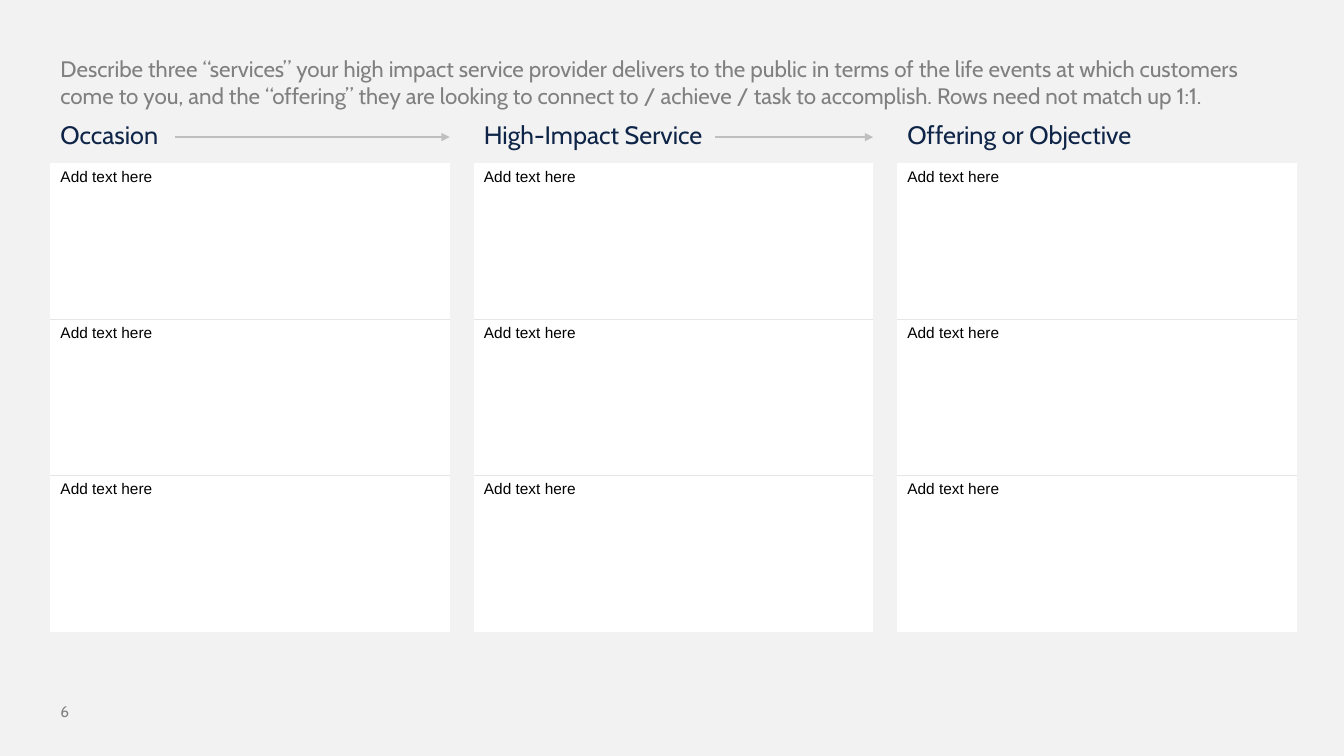
import dataclasses

import lxml.etree
import pptx
import pptx.dml.color
import pptx.enum.shapes
import pptx.enum.text
import pptx.oxml.ns
import pptx.util

Inches = pptx.util.Inches
qn = pptx.oxml.ns.qn


@dataclasses.dataclass(frozen=True)
class Theme:
    background: str = "F2F2F2"
    cell: str = "FFFFFF"
    rule: str = "E6E6E6"
    arrow: str = "BFBFBF"
    prompt = {"name": "Cabin", "size": 16, "color": "808080"}
    heading = {"name": "Cabin", "size": 18, "color": "0F2548"}
    body = {"name": "Arial", "size": 11, "color": "000000"}
    number = {"name": "Cabin", "size": 11, "color": "808080"}


THEME = Theme()

# Grid in inches
WIDTH, HEIGHT = 13.33, 7.5
MARGIN = 0.5
COLUMN, GAP = 3.96, 0.24
TABLE_TOP, HEADING_ROW, BODY_ROW = 1.14, 0.48, 1.55
ARROW_Y = 1.36
NO_STYLE_NO_GRID = "{2D5ABB26-0587-4C30-8999-92F81FD0307C}"

PROMPT = (
    "Describe three “services” your high impact service provider delivers to the "
    "public in terms of the life events at which customers come to you, and the "
    "“offering” they are looking to connect to / achieve / task to accomplish. "
    "Rows need not match up 1:1."
)
HEADINGS = ["Occasion", "High-Impact Service", "Offering or Objective"]
ROWS = [["Add text here"] * len(HEADINGS) for _ in range(3)]


def rgb(value):
    return pptx.dml.color.RGBColor.from_string(value)


def write(text_frame, text, style):
    """Put one formatted, left-aligned paragraph at the top of a frame."""
    paragraph = text_frame.paragraphs[0]
    paragraph.alignment = pptx.enum.text.PP_ALIGN.LEFT
    run = paragraph.add_run()
    run.text = text
    settings = {"name": style["name"], "size": pptx.util.Pt(style["size"]), "bold": False}
    for attribute, value in settings.items():
        setattr(run.font, attribute, value)
    run.font.color.rgb = rgb(style["color"])


def place_text(shape, box, text, style):
    for attribute, value in zip(("left", "top", "width", "height"), box):
        setattr(shape, attribute, Inches(value))
    frame_format = {
        "word_wrap": True,
        "auto_size": pptx.enum.text.MSO_AUTO_SIZE.NONE,
        "vertical_anchor": pptx.enum.text.MSO_ANCHOR.TOP,
    }
    for attribute, value in frame_format.items():
        setattr(shape.text_frame, attribute, value)
    write(shape.text_frame, text, style)


def add_border(cell, side):
    properties = cell._tc.get_or_add_tcPr()
    line = lxml.etree.Element(qn(f"a:{side}"), w=str(pptx.util.Pt(1)))
    fill = lxml.etree.SubElement(line, qn("a:solidFill"))
    lxml.etree.SubElement(fill, qn("a:srgbClr"), val=THEME.rule)
    properties.insert(0, line)


def add_service_table(slide):
    row_count, column_count = len(ROWS) + 1, 2 * len(HEADINGS) - 1
    widths = [GAP if index % 2 else COLUMN for index in range(column_count)]
    heights = [HEADING_ROW] + [BODY_ROW] * len(ROWS)
    frame = slide.shapes.add_table(
        row_count, column_count, Inches(MARGIN), Inches(TABLE_TOP),
        Inches(sum(widths)), Inches(sum(heights)))
    table = frame.table
    table.first_row = table.horz_banding = False
    frame.element.find(f".//{qn('a:tableStyleId')}").text = NO_STYLE_NO_GRID
    for column, width in zip(table.columns, widths):
        column.width = Inches(width)
    for row, height in zip(table.rows, heights):
        row.height = Inches(height)
    for cell in table.iter_cells():
        cell.fill.background()

    # Text sits in every other column; the others are gaps
    for row_index, texts in enumerate([HEADINGS] + ROWS):
        for text_index, text in enumerate(texts):
            cell = table.cell(row_index, 2 * text_index)
            write(cell.text_frame, text, THEME.body if row_index else THEME.heading)
            if row_index:
                cell.fill.solid()
                cell.fill.fore_color.rgb = rgb(THEME.cell)
            if 0 < row_index < len(ROWS):
                add_border(cell, "lnB")
            if row_index > 1:
                add_border(cell, "lnT")


def add_arrow(slide, start, end):
    arrow = slide.shapes.add_connector(
        pptx.enum.shapes.MSO_CONNECTOR.STRAIGHT,
        Inches(start), Inches(ARROW_Y), Inches(end), Inches(ARROW_Y))
    arrow.line.width = pptx.util.Pt(1)
    arrow.line.color.rgb = rgb(THEME.arrow)
    lxml.etree.SubElement(arrow.line._get_or_add_ln(), qn("a:tailEnd"), type="triangle")
    lxml.etree.SubElement(arrow.element.spPr, qn("a:effectLst"))


def main():
    presentation = pptx.Presentation()
    presentation.slide_width, presentation.slide_height = Inches(WIDTH), Inches(HEIGHT)
    slide = presentation.slides.add_slide(presentation.slide_layouts.get_by_name("Title Only"))
    slide.background.fill.solid()
    slide.background.fill.fore_color.rgb = rgb(THEME.background)

    # Prompt and slide number
    place_text(slide.shapes.title, (MARGIN, MARGIN, WIDTH - 2 * MARGIN, 0.64),
               PROMPT, THEME.prompt)
    number = slide.shapes.add_textbox(0, 0, 0, 0)
    place_text(number, (MARGIN, 6.92, 0.83, 0.4), "6", THEME.number)

    # Table, with arrows running from each heading to its column's edge
    add_service_table(slide)
    for index, start in enumerate((1.74, 7.09)):
        add_arrow(slide, start, MARGIN + COLUMN + index * (COLUMN + GAP))

    presentation.save("out.pptx")


if __name__ == "__main__":
    main()
